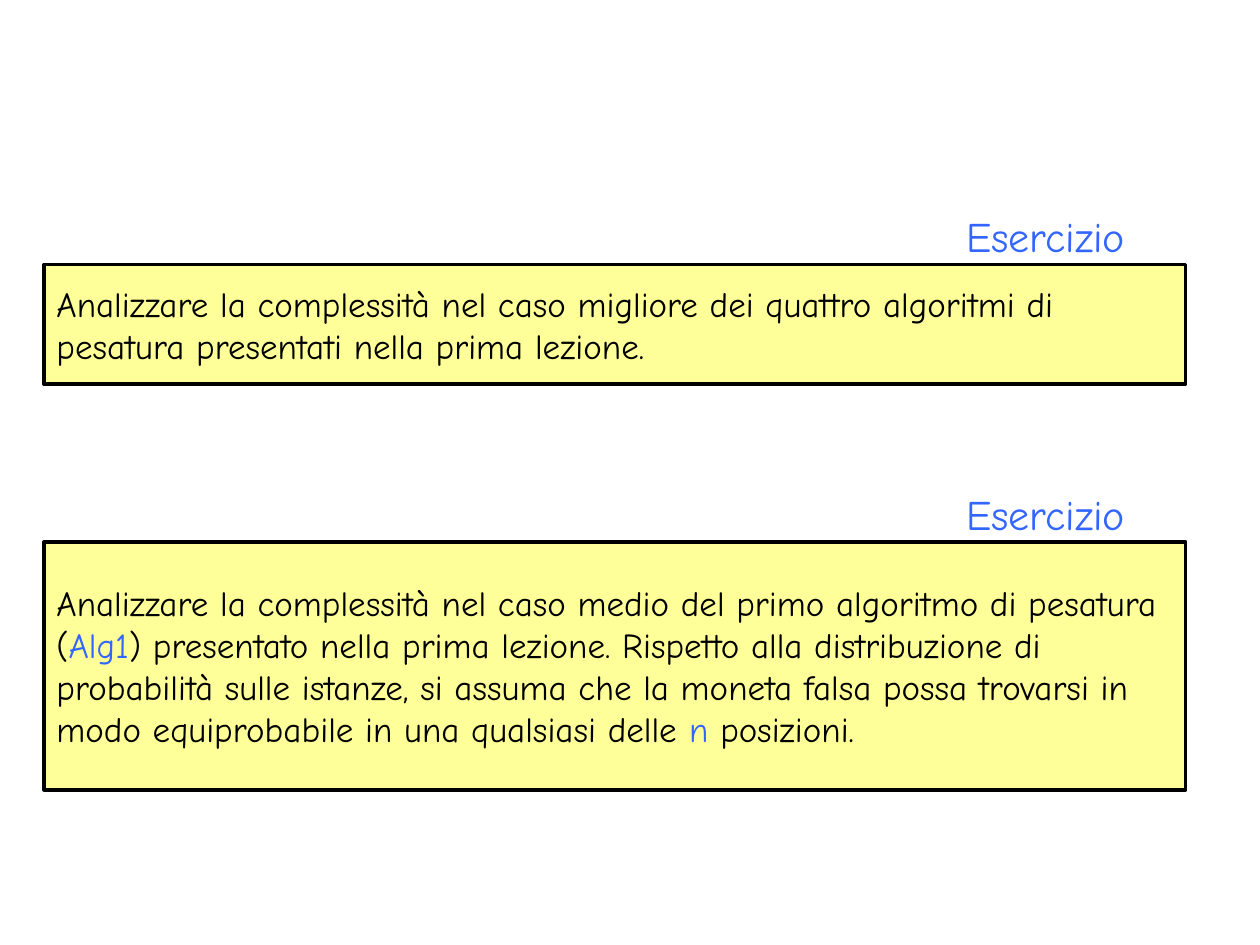
"""Build a slide with two boxed exercises, each under its own heading."""
import pptx
import pptx.dml.color
import pptx.enum.shapes
import pptx.enum.text
import pptx.util

Pt = pptx.util.Pt

HEADING = "Esercizio"
EXERCISES = [
    {
        "top": 151.2,
        "height": 68.4,
        "runs": [
            ("Analizzare la complessità nel caso migliore dei quattro algoritmi di "
             "pesatura presentati nella prima lezione.", "text"),
        ],
    },
    {
        "top": 309.6,
        "height": 141.8,
        "runs": [
            ("Analizzare la complessità nel caso medio del primo algoritmo di pesatura (", "text"),
            ("Alg1", "accent"),
            (") presentato nella prima lezione. Rispetto alla distribuzione di probabilità "
             "sulle istanze, si assuma che la moneta falsa possa trovarsi in modo "
             "equiprobabile in una qualsiasi delle ", "text"),
            ("n ", "accent"),
            ("posizioni.", "text"),
        ],
    },
]
COLORS = {"box": "FFFF99", "text": "000000", "accent": "3366FF"}
FONT = "Comic Neue"
BOX_LEFT, BOX_WIDTH = 25.2, 652.3
HEADING_LEFT, HEADING_WIDTH, HEADING_HEIGHT = 545, 118, 36
HEADING_RISE = 34.2


def color(name):
    return pptx.dml.color.RGBColor.from_string(COLORS[name])


def add_runs(paragraph, runs, size):
    paragraph.alignment = pptx.enum.text.PP_ALIGN.LEFT
    for text, color_name in runs:
        run = paragraph.add_run()
        run.text = text
        run.font.name = FONT
        run.font.size = Pt(size)
        run.font.color.rgb = color(color_name)


def add_box(slide, exercise):
    box = slide.shapes.add_shape(
        pptx.enum.shapes.MSO_SHAPE.RECTANGLE,
        Pt(BOX_LEFT), Pt(exercise["top"]), Pt(BOX_WIDTH), Pt(exercise["height"]))
    box.shadow.inherit = False
    box.fill.solid()
    box.fill.fore_color.rgb = color("box")
    box.line.color.rgb = color("text")
    box.line.width = Pt(2)
    frame = box.text_frame
    frame.word_wrap = True
    frame.vertical_anchor = pptx.enum.text.MSO_ANCHOR.MIDDLE
    add_runs(frame.paragraphs[0], exercise["runs"], 20)


def add_heading(slide, exercise):
    heading = slide.shapes.add_textbox(
        Pt(HEADING_LEFT), Pt(exercise["top"] - HEADING_RISE),
        Pt(HEADING_WIDTH), Pt(HEADING_HEIGHT))
    frame = heading.text_frame
    frame.word_wrap = False
    frame.auto_size = pptx.enum.text.MSO_AUTO_SIZE.SHAPE_TO_FIT_TEXT
    add_runs(frame.paragraphs[0], [(HEADING, "accent")], 24)


def main():
    presentation = pptx.Presentation()
    presentation.slide_width = Pt(720)
    presentation.slide_height = Pt(540)
    slide = presentation.slides.add_slide(presentation.slide_layouts[6])
    for exercise in EXERCISES:
        add_box(slide, exercise)
        add_heading(slide, exercise)
    presentation.save("out.pptx")


if __name__ == "__main__":
    main()
